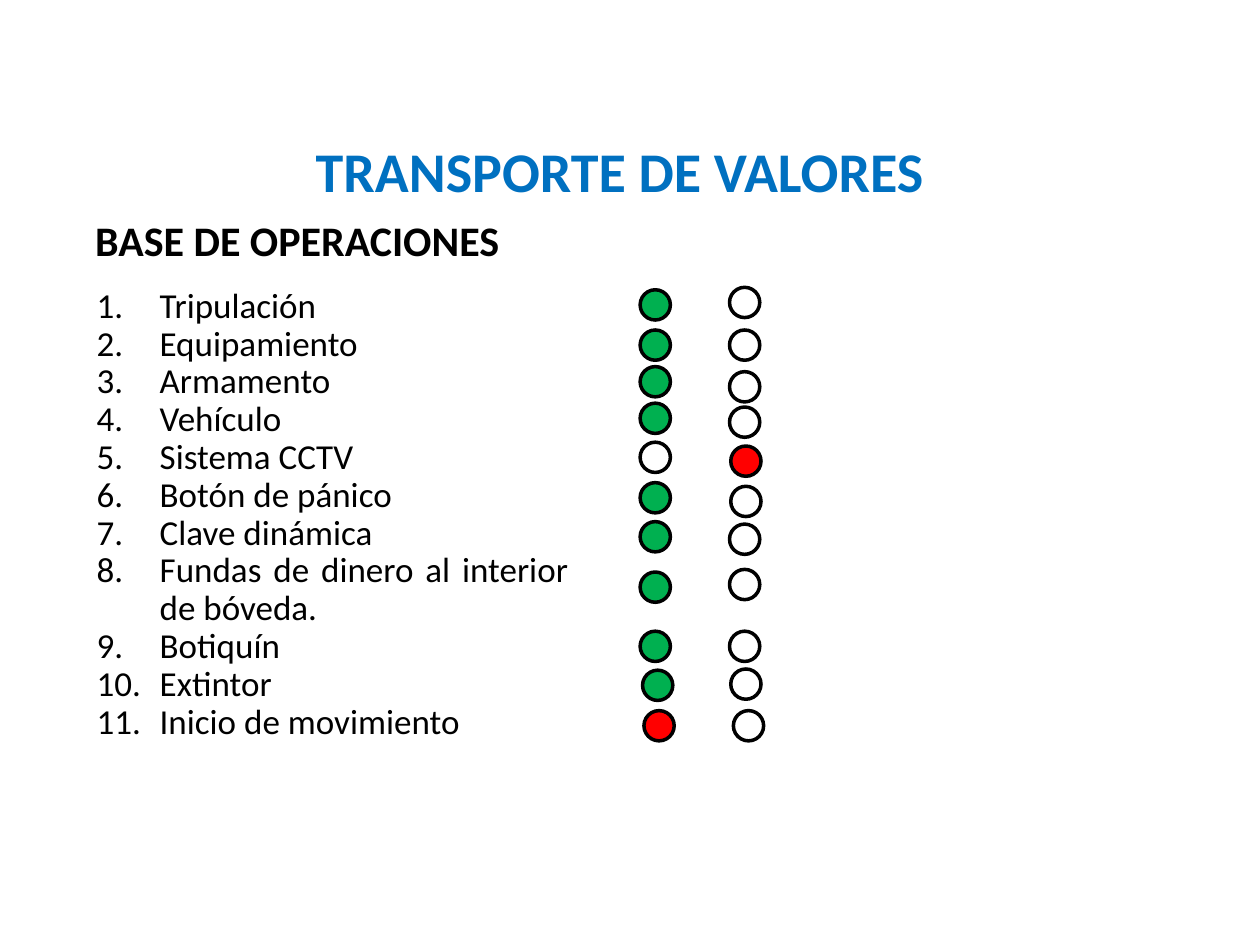
from dataclasses import dataclass

from lxml import etree
from pptx import Presentation
from pptx.dml.color import RGBColor
from pptx.enum.shapes import MSO_SHAPE
from pptx.enum.text import MSO_ANCHOR, MSO_AUTO_SIZE, PP_ALIGN
from pptx.oxml.ns import qn
from pptx.util import Pt

OVAL = MSO_SHAPE.OVAL
TOP, MIDDLE = MSO_ANCHOR.TOP, MSO_ANCHOR.MIDDLE
CENTER, JUSTIFY = PP_ALIGN.CENTER, PP_ALIGN.JUSTIFY
NO_FIT = MSO_AUTO_SIZE.NONE
TITLE_ONLY = 5


@dataclass(frozen=True)
class Theme:
    font: str = "Calibri"
    title_size: float = 32
    heading_size: float = 24
    list_size: float = 20
    blue: str = "0070C0"
    black: str = "000000"
    green: str = "00B050"
    red: str = "FF0000"
    white: str = "FFFFFF"


@dataclass(frozen=True)
class Light:
    x: float
    y: float
    color: str


@dataclass(frozen=True)
class CheckItem:
    label: str
    ok: Light
    fault: Light


THEME = Theme()
OK_X, FAULT_X = 365.8, 416.9
DIAMETER, OUTLINE = 17.3, 2
INDENT = 36


def ok(y: float, dx: float = 0, color: str = THEME.green) -> Light:
    return Light(OK_X + dx, y, color)


def fault(y: float, dx: float = 0, color: str = THEME.white) -> Light:
    return Light(FAULT_X + dx, y, color)


ITEMS = [
    CheckItem("Tripulación", ok(165.6), fault(164.2)),
    CheckItem("Equipamiento", ok(188.6), fault(188.6)),
    CheckItem("Armamento", ok(209.5), fault(212.4)),
    CheckItem("Vehículo", ok(230.4), fault(232.6)),
    CheckItem("Sistema CCTV", ok(252.7, color=THEME.white), fault(254.9, 0.7, THEME.red)),
    CheckItem("Botón de pánico", ok(275.8), fault(277.9, 0.7)),
    CheckItem("Clave dinámica", ok(298.1), fault(299.5)),
    CheckItem("Fundas de dinero al interior de bóveda.", ok(326.9), fault(325.4)),
    CheckItem("Botiquín", ok(360.7), fault(360.7)),
    CheckItem("Extintor", ok(383, 1.4), fault(382.3, 0.7)),
    CheckItem("Inicio de movimiento", ok(406.1, 2.2, THEME.red), fault(406.1, 2.2)),
]


def set_frame(tf, anchor) -> None:
    frame = {"word_wrap": True, "auto_size": NO_FIT, "vertical_anchor": anchor,
             "margin_left": Pt(7.2), "margin_right": Pt(7.2),
             "margin_top": Pt(3.6), "margin_bottom": Pt(3.6)}
    for name, value in frame.items():
        setattr(tf, name, value)


def write(p, text: str, size: float, color: str, bold: bool, align) -> None:
    p.alignment = align
    r = p.add_run()
    r.text = text
    for name, value in {"name": THEME.font, "size": Pt(size), "bold": bold}.items():
        setattr(r.font, name, value)
    r.font.color.rgb = RGBColor.from_string(color)


def number(p) -> None:
    """Give a paragraph a hanging automatic number."""
    pPr = p._p.get_or_add_pPr()
    pPr.set("marL", str(Pt(INDENT)))
    pPr.set("indent", str(Pt(-INDENT)))
    etree.SubElement(pPr, qn("a:buFont"), typeface="+mj-lt")
    etree.SubElement(pPr, qn("a:buAutoNum"), type="arabicPeriod")


def add_light(s, light: Light) -> None:
    sp = s.shapes.add_shape(OVAL, Pt(light.x), Pt(light.y), Pt(DIAMETER), Pt(DIAMETER))
    sp.shadow.inherit = False
    sp.fill.solid()
    sp.fill.fore_color.rgb = RGBColor.from_string(light.color)
    sp.line.color.rgb = RGBColor.from_string(THEME.black)
    sp.line.width = Pt(OUTLINE)


def main() -> None:
    prs = Presentation()
    prs.slide_width, prs.slide_height = Pt(720), Pt(540)
    s = prs.slides.add_slide(prs.slide_layouts[TITLE_ONLY])

    # Title
    title = s.shapes.title
    box = {"left": 93.6, "top": 60.5, "width": 521.3, "height": 73.4}
    for name, value in box.items():
        setattr(title, name, Pt(value))
    set_frame(title.text_frame, MIDDLE)
    write(title.text_frame.paragraphs[0], "TRANSPORTE DE VALORES",
          THEME.title_size, THEME.blue, True, CENTER)

    # Section heading
    heading = s.shapes.add_textbox(Pt(-14.4), Pt(100.1), Pt(368.6), Pt(73.4))
    set_frame(heading.text_frame, MIDDLE)
    write(heading.text_frame.paragraphs[0], "BASE DE OPERACIONES",
          THEME.heading_size, THEME.black, True, CENTER)

    # Numbered checklist
    tf = s.shapes.add_textbox(Pt(48.2), Pt(161), Pt(283.7), Pt(294.5)).text_frame
    set_frame(tf, TOP)
    for i, item in enumerate(ITEMS):
        p = tf.add_paragraph() if i else tf.paragraphs[0]
        p.line_spacing = 0.9
        write(p, item.label, THEME.list_size, THEME.black, False, JUSTIFY)
        number(p)

    # Status lights
    for item in ITEMS:
        add_light(s, item.ok)
        add_light(s, item.fault)

    prs.save("out.pptx")


if __name__ == "__main__":
    main()
